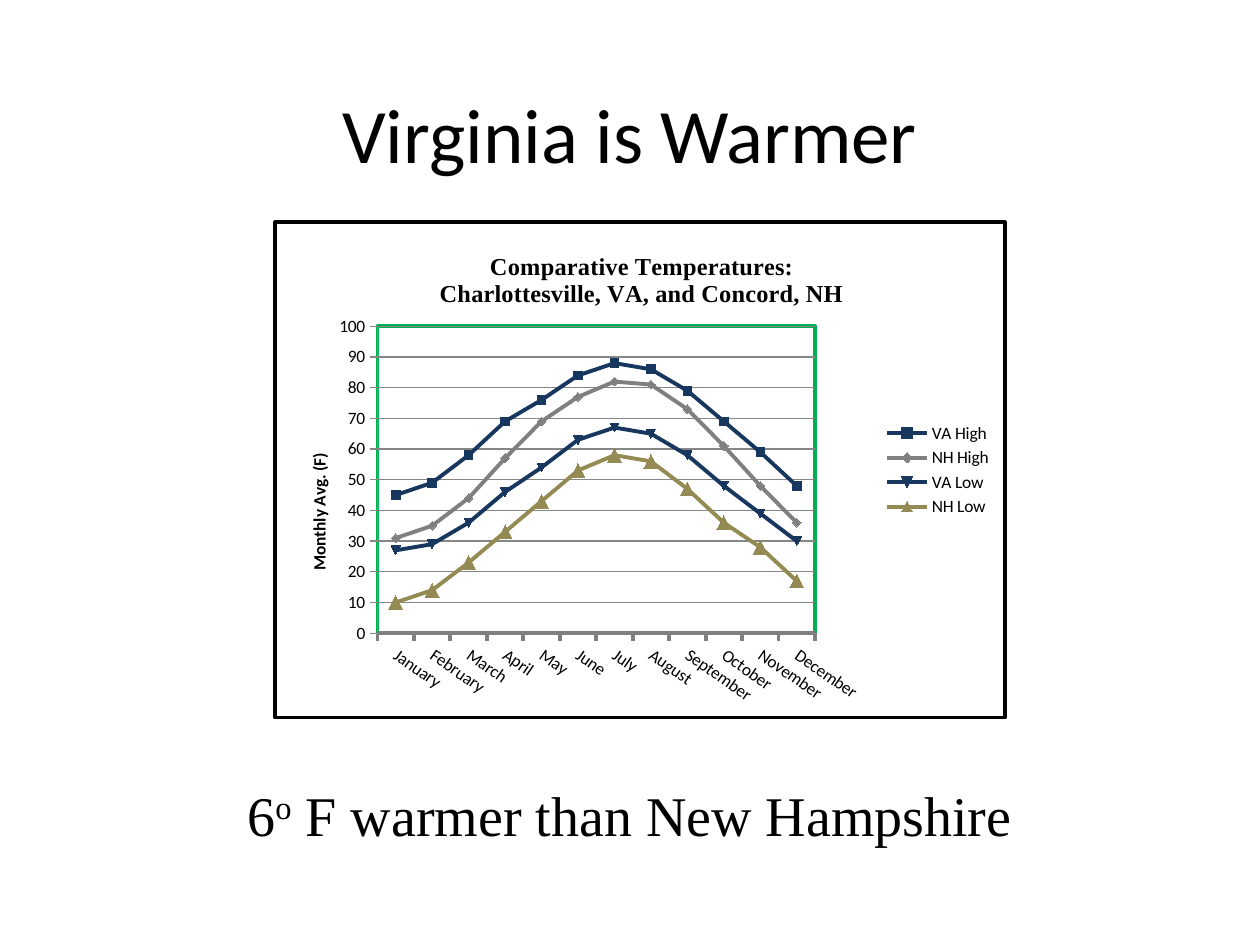
"""Build the slide that compares temperatures in Virginia and New Hampshire."""
from pptx import Presentation
from pptx.chart.data import CategoryChartData
from pptx.dml.color import RGBColor
from pptx.enum.chart import XL_CHART_TYPE, XL_LEGEND_POSITION, XL_MARKER_STYLE, XL_TICK_MARK
from pptx.enum.text import MSO_ANCHOR, PP_ALIGN
from pptx.oxml import parse_xml
from pptx.oxml.ns import nsdecls, qn
from pptx.util import Inches, Pt

COLORS = {
    "black": "000000",
    "navy": "17375E",
    "gray": "808080",
    "olive": "948A54",
    "green": "00B050",
    "grid": "868686",
}
SANS, SERIF = "Calibri", "Times New Roman"
MONTHS = ["January", "February", "March", "April", "May", "June", "July",
          "August", "September", "October", "November", "December"]
SERIES = [
    ("VA High", "navy", [45, 49, 58, 69, 76, 84, 88, 86, 79, 69, 59, 48]),
    ("NH High", "gray", [31, 35, 44, 57, 69, 77, 82, 81, 73, 61, 48, 36]),
    ("VA Low", "navy", [27, 29, 36, 46, 54, 63, 67, 65, 58, 48, 39, 30]),
    ("NH Low", "olive", [10, 14, 23, 33, 43, 53, 58, 56, 47, 36, 28, 17]),
]


def rgb(name):
    """Return the named colour."""
    return RGBColor.from_string(COLORS[name])


def style_font(font, size, face=SANS, bold=False):
    """Apply size, face and weight in black."""
    font.size, font.name, font.bold = Pt(size), face, bold
    font.color.rgb = rgb("black")


def add_span(para, text, size, face=SANS, bold=False, baseline=None):
    """Add formatted text to a paragraph."""
    span = para.add_run()
    span.text = text
    style_font(span.font, size, face, bold)
    if baseline:
        span._r.get_or_add_rPr().set("baseline", str(baseline * 1000))


def add_box(page, left, top, width, height):
    """Add a centred text box and return its first paragraph."""
    box = page.shapes.add_textbox(Inches(left), Inches(top), Inches(width), Inches(height))
    box.text_frame.word_wrap = True
    box.text_frame.vertical_anchor = MSO_ANCHOR.MIDDLE
    para = box.text_frame.paragraphs[0]
    para.alignment = PP_ALIGN.CENTER
    return para


def style_line(line, color, width):
    """Set the colour and width of a line."""
    line.color.rgb = rgb(color)
    line.width = Pt(width)


def outline_xml(color, width):
    """Return chart shape properties with an outline and no fill."""
    return parse_xml(
        f'<c:spPr {nsdecls("c", "a")}><a:noFill/><a:ln w="{Pt(width)}"><a:solidFill>'
        f'<a:srgbClr val="{COLORS[color]}"/></a:solidFill></a:ln></c:spPr>')


def place(element, index, **fractions):
    """Give a chart part a manual layout in fractions of the chart."""
    for old in element.findall(qn("c:layout")):
        element.remove(old)
    target = '<c:layoutTarget val="inner"/>' if "w" in fractions else ""
    modes = '<c:xMode val="edge"/><c:yMode val="edge"/>'
    values = "".join(f'<c:{key} val="{value}"/>' for key, value in fractions.items())
    element.insert(index, parse_xml(
        f'<c:layout {nsdecls("c")}><c:manualLayout>{target}{modes}{values}'
        '</c:manualLayout></c:layout>'))


def style_axes(chart):
    """Format both axes and the value axis title."""
    months, degrees = chart.category_axis, chart.value_axis
    for axis in (months, degrees):
        axis.major_tick_mark = XL_TICK_MARK.OUTSIDE
        style_line(axis.format.line, "grid", 0.75)
        style_font(axis.tick_labels.font, 10)
    style_line(months.format.line, "gray", 2.25)
    months._element.find(qn("c:txPr")).find(qn("a:bodyPr")).set("rot", str(35 * 60000))
    degrees.minimum_scale, degrees.maximum_scale, degrees.major_unit = 0, 100, 10
    style_line(degrees.major_gridlines.format.line, "grid", 0.75)
    title = degrees.axis_title
    add_span(title.text_frame.paragraphs[0], "Monthly Avg. (F)", 10, bold=True)
    title.text_frame._txBody.find(qn("a:bodyPr")).set("rot", str(-90 * 60000))
    place(title._element, 1, x=0.04, y=0.46)


def style_series(chart):
    """Format the lines and markers, leaving most symbols automatic."""
    for series, (_, color, _) in zip(chart.plots[0].series, SERIES):
        series.smooth = False
        style_line(series.format.line, color, 2.25)
        series.marker.size = 5
        series.marker.format.fill.solid()
        series.marker.format.fill.fore_color.rgb = rgb(color)
        style_line(series.marker.format.line, color, 0.75)
    series.marker.style = XL_MARKER_STYLE.TRIANGLE
    series.marker.size = 8


def add_temperature_chart(page):
    """Add the framed line chart of monthly temperatures."""
    data = CategoryChartData()
    data.categories = MONTHS
    for name, _, values in SERIES:
        data.add_series(name, values)
    chart = page.shapes.add_chart(
        XL_CHART_TYPE.LINE_MARKERS, Inches(2.17), Inches(1.75),
        Inches(5.82), Inches(3.96), data).chart
    style_font(chart.font, 10)
    chart.plots[0].vary_by_categories = False
    chart.has_legend = True
    chart.legend.position = XL_LEGEND_POSITION.RIGHT
    chart.legend.include_in_layout = False
    style_font(chart.legend.font, 10)

    frame = chart.chart_title.text_frame
    lines = ["Comparative Temperatures:", "Charlottesville, VA, and Concord, NH"]
    for para, text in zip((frame.paragraphs[0], frame.add_paragraph()), lines):
        para.alignment = PP_ALIGN.CENTER
        add_span(para, text, 14, SERIF, bold=True)
    place(chart.chart_title._element, 1, x=0.22, y=0.05)

    style_axes(chart)
    style_series(chart)
    body = chart._chartSpace.find(qn("c:chart"))
    plot_area = body.find(qn("c:plotArea"))
    place(plot_area, 0, x=0.14, y=0.21, w=0.6, h=0.62)
    plot_area.append(outline_xml("green", 2.25))
    body.addnext(outline_xml("black", 2.25))


def main():
    """Build and save the deck."""
    deck = Presentation()
    deck.slide_width, deck.slide_height = Inches(10), Inches(7.5)
    page = deck.slides.add_slide(deck.slide_layouts[6])
    add_span(add_box(page, 0.75, 0.25, 8.5, 1.61), "Virginia is Warmer", 44)
    add_temperature_chart(page)
    summary = add_box(page, 1.5, 5.5, 7, 1.92)
    add_span(summary, "6", 32, SERIF)
    add_span(summary, "o", 32, SERIF, baseline=30)
    add_span(summary, " F warmer than New Hampshire", 32, SERIF)
    deck.save("out.pptx")


if __name__ == "__main__":
    main()
